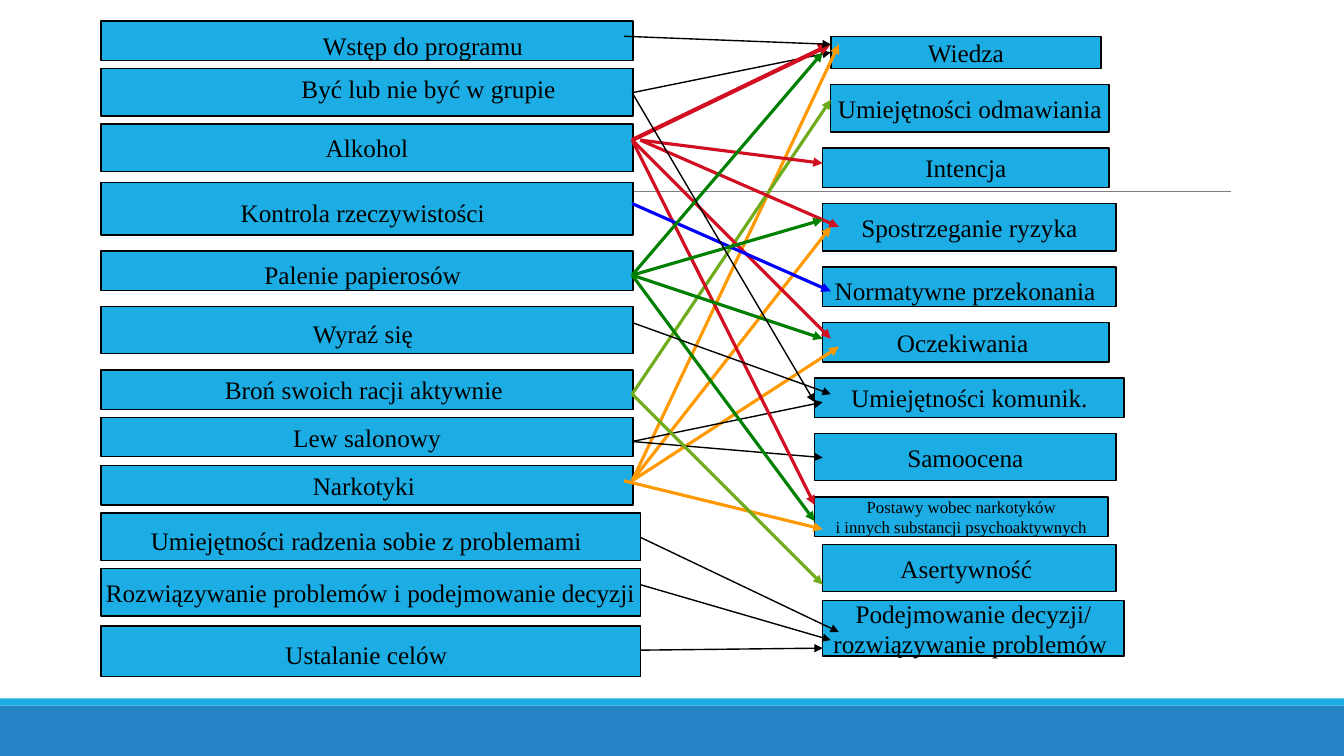
from lxml.etree import SubElement
from pptx import Presentation
from pptx.dml.color import RGBColor
from pptx.enum.shapes import MSO_CONNECTOR as Line, MSO_SHAPE as Shape
from pptx.enum.text import MSO_ANCHOR as Anchor, PP_ALIGN as Align
from pptx.oxml.ns import qn
from pptx.util import Inches, Pt

BLACK = RGBColor(0x00, 0x00, 0x00)
GRAY = RGBColor(0x80, 0x80, 0x80)
SKY = RGBColor(0x1C, 0xAD, 0xE4)
NAVY = RGBColor(0x26, 0x83, 0xC6)
ORANGE = RGBColor(0xFF, 0x99, 0x00)
LIME = RGBColor(0x6E, 0xAC, 0x1C)
RED = RGBColor(0xD2, 0x0E, 0x21)
BLUE = RGBColor(0x00, 0x00, 0xFF)
GREEN = RGBColor(0x00, 0x80, 0x00)
FONT = "Times New Roman"

# Boxes: left, top, width, height, text, size of text, size of a closing space
TOPICS = [
    (1, 0.21, 5.28, 0.39, "", 18, 0),
    (1, 0.68, 5.28, 0.47, "", 18, 0),
    (1, 1.23, 5.28, 0.47, "Alkohol", 18, 0),
    (1, 1.81, 5.28, 0.52, "Kontrola rzeczywistości", 18, 24),
    (1, 2.49, 5.28, 0.39, "Palenie papierosów", 18, 24),
    (1, 3.04, 5.28, 0.47, "Wyraź się", 18, 24),
    (1, 3.67, 5.28, 0.39, "Broń swoich racji aktywnie", 18, 18),
    (1, 4.14, 5.28, 0.39, "Lew salonowy", 18, 0),
    (1, 4.62, 5.28, 0.39, "Narkotyki", 18, 18),
    (1, 5.09, 5.35, 0.47, "Umiejętności radzenia sobie z problemami", 18, 24),
    (1, 5.64, 5.35, 0.47, "Rozwiązywanie problemów i podejmowanie decyzji", 18, 0),
    (1, 6.21, 5.35, 0.5, "Ustalanie celów", 18, 24),
]
GOALS = [
    (8.24, 0.36, 2.68, 0.32, "Wiedza", 18, 0),
    (8.24, 0.84, 2.76, 0.47, "Umiejętności odmawiania", 18, 0),
    (8.16, 1.47, 2.84, 0.39, "Intencja", 18, 0),
    (8.16, 2.02, 2.91, 0.47, "Spostrzeganie ryzyka", 18, 0),
    (8.16, 2.65, 2.91, 0.39, "Normatywne przekonania", 18, 24),
    (8.16, 3.2, 2.84, 0.39, "Oczekiwania", 18, 18),
    (8.08, 3.75, 3.07, 0.39, "Umiejętności komunik.", 18, 0),
    (8.08, 4.3, 2.99, 0.47, "Samoocena", 18, 0),
    (8.08, 4.93, 2.91, 0.39,
     "Postawy wobec narkotyków\n i innych substancji psychoaktywnych", 12, 12),
    (8.16, 5.4, 2.91, 0.47, "Asertywność", 18, 18),
    (8.16, 5.96, 2.99, 0.55, "Podejmowanie decyzji/\nrozwiązywanie problemów", 18, 18),
]
# Labels laid over the first two topic boxes: box, text, line spacing, wrap
LABELS = [
    ((2.73, 0.29, 2.93, 0.77), "Wstęp do programu", 0.9, True),
    ((2.89, 0.68, 2.72, 0.4), "Być lub nie być w grupie", 1.0, False),
]
# Arrows: start, colour, width, ends
LINKS = [
    ((6.27, 0.92), BLACK, 1, [(8.24, 0.52)]),
    ((6.35, 6.45), BLACK, 1, [(8.16, 6.43)]),
    ((6.35, 5.8), BLACK, 1, [(8.24, 6.35)]),
    ((6.35, 5.33), BLACK, 1, [(8.32, 6.27)]),
    ((6.19, 4.77), ORANGE, 2.25, [(8.16, 5.25)]),
    ((6.27, 4.77), ORANGE, 2.25, [(8.32, 3.44), (8.24, 2.25), (8.32, 0.44)]),
    ((6.27, 4.38), BLACK, 1, [(8.16, 3.99), (8.16, 4.54)]),
    ((6.27, 3.91), LIME, 2.25, [(8.16, 5.8), (8.24, 0.99)]),
    ((6.27, 1.39), RED, 3, [(8.24, 0.44)]),
    ((6.35, 1.39), RED, 2.25, [(8.32, 2.25), (8.16, 1.62)]),
    ((6.27, 1.39), RED, 2.25, [(8.08, 5.01), (8.24, 3.36)]),
    ((6.27, 2.02), BLUE, 2.25, [(8.24, 2.89)]),
    ((6.27, 2.73), GREEN, 2.25,
     [(8.16, 0.52), (8.16, 2.18), (8.16, 3.36), (8.08, 5.17)]),
    ((6.27, 3.2), BLACK, 1, [(8.24, 3.91)]),
    ((6.27, 0.92), BLACK, 1, [(8.08, 3.99)]),
    ((6.19, 0.36), BLACK, 1, [(8.24, 0.44)]),
]


def style(par, size):
    par.alignment = Align.CENTER
    par.font.name = FONT
    par.font.size = Pt(size)
    par.font.color.rgb = BLACK


def add_rect(slide, box, fill, edge=None):
    rect = slide.shapes.add_shape(Shape.RECTANGLE, *map(Inches, box))
    rect.shadow.inherit = False
    rect.fill.solid()
    rect.fill.fore_color.rgb = fill
    if edge is None:
        rect.line.fill.background()
    else:
        rect.line.color.rgb = edge
        rect.line.width = Pt(1)
    return rect


def add_line(slide, start, end, color, width, head=True):
    line = slide.shapes.add_connector(Line.STRAIGHT, *map(Inches, start + end))
    line.line.color.rgb = color
    line.line.width = Pt(width)
    if head:
        SubElement(line.line._get_or_add_ln(), qn("a:tailEnd"), type="triangle")
    SubElement(line._element.spPr, qn("a:effectLst"))


def add_frame(slide, wide, high):
    # Footer bars and the rule across the slide
    add_rect(slide, (0, high - 0.5, wide, 0.5), NAVY)
    add_rect(slide, (0, high - 0.57, wide, 0.07), SKY)
    add_line(slide, (1.31, 1.9), (12.21, 1.9), GRAY, 0.5, head=False)


def add_boxes(slide, rows):
    for *box, text, size, space in rows:
        frame = add_rect(slide, box, SKY, BLACK).text_frame
        frame.word_wrap = False
        frame.vertical_anchor = Anchor.MIDDLE
        if not text:
            continue
        frame.text = text
        for par in frame.paragraphs:
            style(par, size)
        if space:
            # The closing space sets the height of the last line
            run = par.add_run()
            run.text = " "
            run.font.size = Pt(space)


def add_labels(slide):
    for box, text, gap, wrap in LABELS:
        frame = slide.shapes.add_textbox(*map(Inches, box)).text_frame
        frame.word_wrap = wrap
        frame.text = text
        par = frame.paragraphs[0]
        style(par, 18)
        par.line_spacing = gap


def add_links(slide):
    for start, color, width, ends in LINKS:
        for end in ends:
            add_line(slide, start, end, color, width)


def main():
    deck = Presentation()
    wide, high = 13.33, 7.5
    deck.slide_width, deck.slide_height = Inches(wide), Inches(high)
    slide = deck.slides.add_slide(deck.slide_layouts[6])
    add_frame(slide, wide, high)
    add_boxes(slide, TOPICS)
    add_labels(slide)
    add_boxes(slide, GOALS)
    add_links(slide)
    deck.save("out.pptx")


if __name__ == "__main__":
    main()
